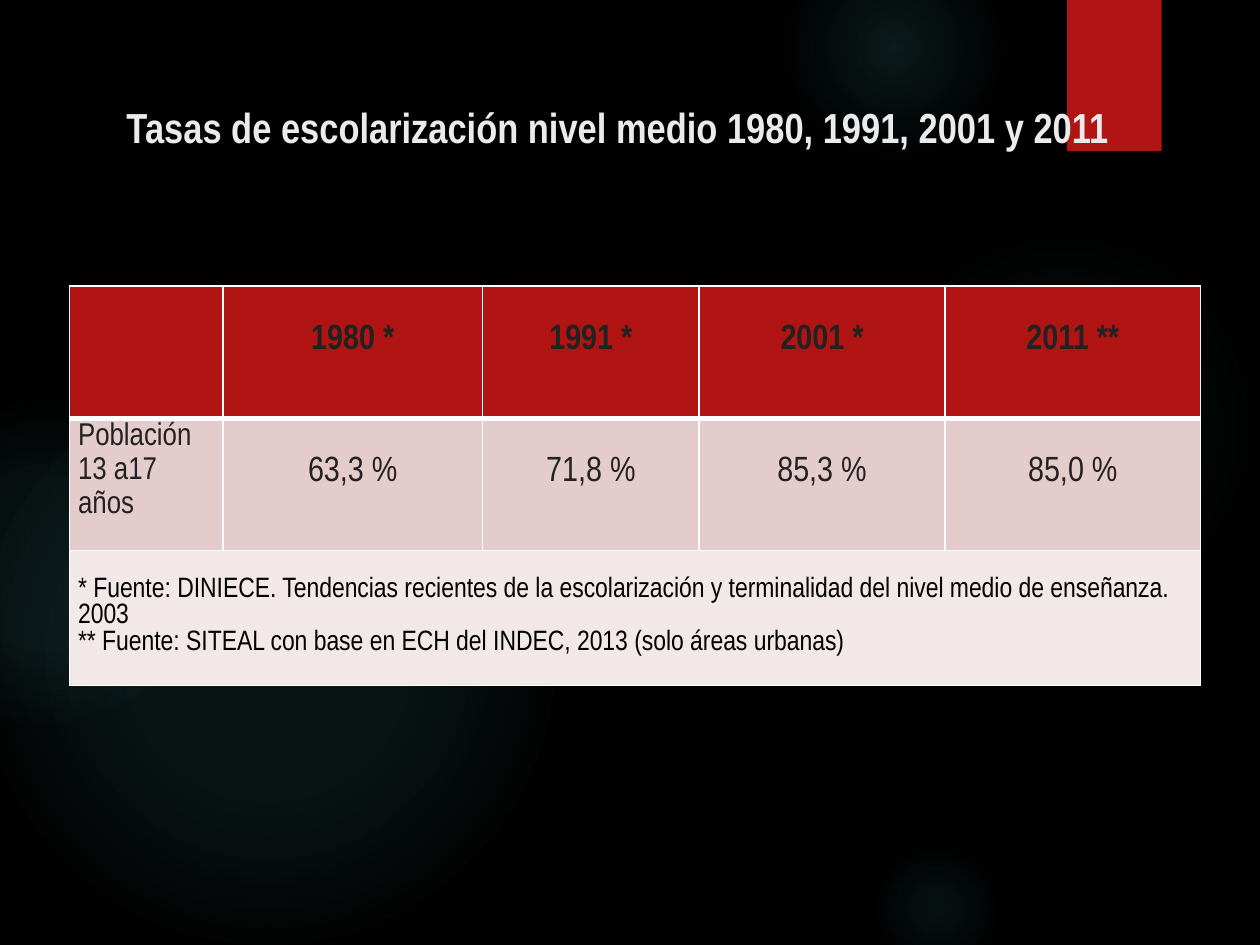
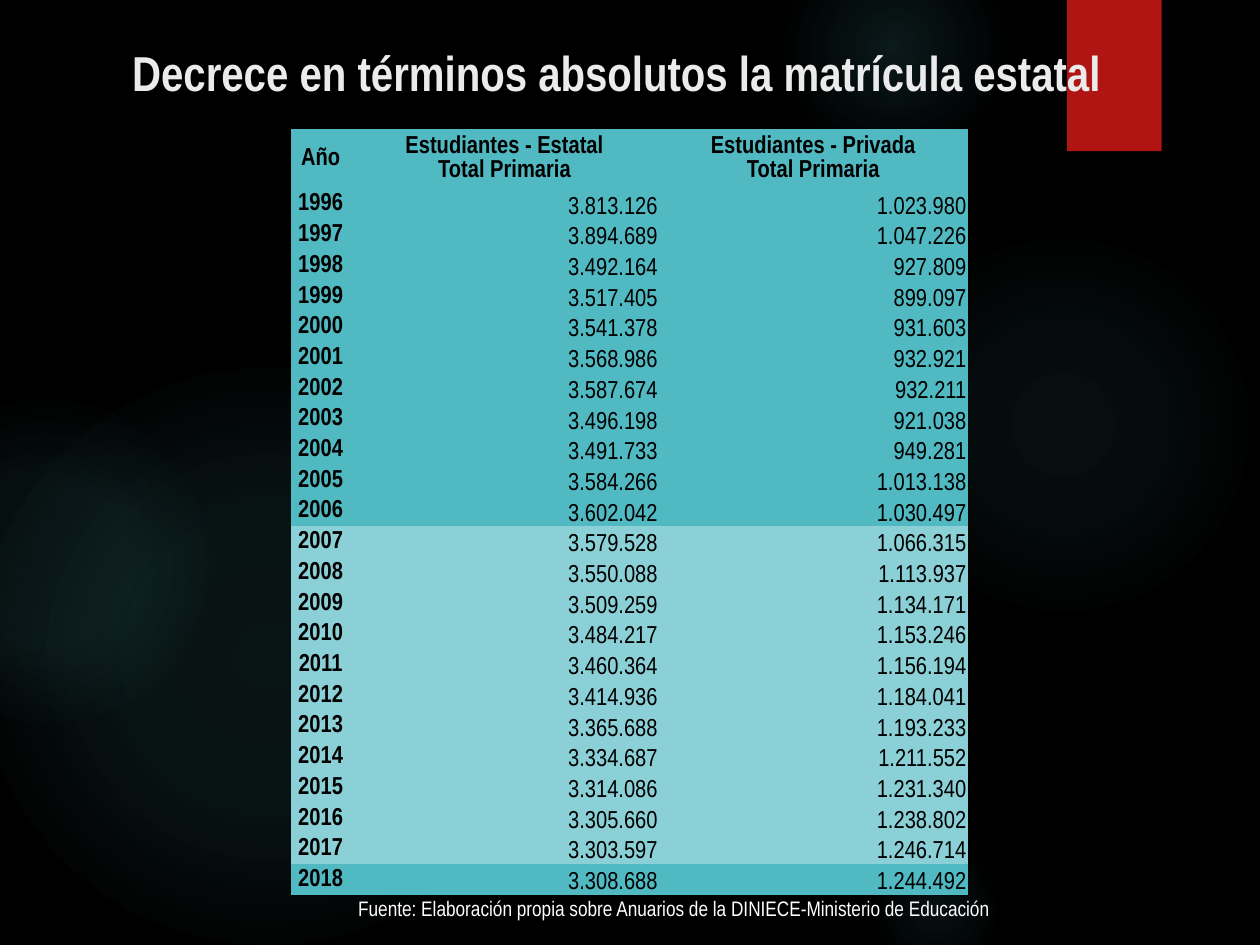
from dataclasses import dataclass
from typing import Any, Sequence

import pptx
import pptx.dml.color
import pptx.enum.shapes
import pptx.enum.text
import pptx.oxml
import pptx.oxml.ns
import pptx.util
from pptx.util import Inches

ALIGN = pptx.enum.text.PP_ALIGN
ANCHOR = pptx.enum.text.MSO_ANCHOR
SHAPE = pptx.enum.shapes.MSO_SHAPE


@dataclass(frozen=True)
class Theme:
    font: str = "Arial Narrow"
    black: str = "000000"
    white: str = "FFFFFF"
    title: str = "EBEBEB"
    ink: str = "222222"
    red: str = "B01513"
    pink: str = "E4CCCC"
    pale_pink: str = "F2E8E7"
    teal: str = "50B9C1"
    light_teal: str = "8AD0D6"
    rate_size: int = 20
    label_size: int = 18
    note_size: int = 16
    enrolment_size: int = 14
    source_size: int = 12


@dataclass(frozen=True)
class Glow:
    left: float
    top: float
    size: float
    stops: tuple[tuple[int, int], ...]  # position and opacity, in percent


@dataclass(frozen=True)
class Cell:
    text: str
    fill: str
    size: int
    color: str = "000000"
    bold: bool = False
    align: Any = ALIGN.CENTER
    anchor: Any = ANCHOR.TOP
    margins: tuple[float, float, float, float] = (0.01, 0.01, 0.01, 0)
    spacing: float = 1.0


THEME = Theme()

GLOWS = (
    Glow(6.89, 1.83, 3.08, ((0, 7), (36, 6), (69, 0))),
    Glow(6.22, -0.5, 1.75, ((0, 14), (36, 7), (73, 0))),
    Glow(6.89, 6.67, 1.08, ((0, 9), (36, 5), (66, 0))),
    Glow(-0.17, 2.92, 4.58, ((0, 11), (36, 10), (75, 0))),
    Glow(-0.92, 3.17, 2.58, ((0, 8), (36, 8), (72, 0))),
)

RATES = (("1980 *", "63,3 %"), ("1991 *", "71,8 %"),
         ("2001 *", "85,3 %"), ("2011 **", "85,0 %"))
RATE_SOURCES = (
    "* Fuente: DINIECE. Tendencias recientes de la escolarización y "
    "terminalidad del nivel medio de enseñanza. 2003\n"
    "** Fuente: SITEAL con base en ECH del INDEC, 2013 (solo áreas urbanas)"
)

FIRST_YEAR = 1996
LIGHT_YEARS = range(2007, 2018)
ENROLMENT = (
    ("3.813.126", "1.023.980"), ("3.894.689", "1.047.226"),
    ("3.492.164", "927.809"), ("3.517.405", "899.097"),
    ("3.541.378", "931.603"), ("3.568.986", "932.921"),
    ("3.587.674", "932.211"), ("3.496.198", "921.038"),
    ("3.491.733", "949.281"), ("3.584.266", "1.013.138"),
    ("3.602.042", "1.030.497"), ("3.579.528", "1.066.315"),
    ("3.550.088", "1.113.937"), ("3.509.259", "1.134.171"),
    ("3.484.217", "1.153.246"), ("3.460.364", "1.156.194"),
    ("3.414.936", "1.184.041"), ("3.365.688", "1.193.233"),
    ("3.334.687", "1.211.552"), ("3.314.086", "1.231.340"),
    ("3.305.660", "1.238.802"), ("3.303.597", "1.246.714"),
    ("3.308.688", "1.244.492"),
)


def rgb(color: str) -> pptx.dml.color.RGBColor:
    return pptx.dml.color.RGBColor.from_string(color)


def xml(body: str) -> Any:
    """Parse one DrawingML element whose tag starts the body."""
    tag, rest = body[1:].split(">", 1)
    return pptx.oxml.parse_xml(f"<{tag} {pptx.oxml.ns.nsdecls('a')}>{rest}")


def write(tf: Any, text: str, *, size: int, color: str, bold: bool = False,
          align: Any = ALIGN.CENTER, spacing: float = 1.0) -> None:
    """Fill a text frame, one paragraph for each line of text."""
    tf.word_wrap = True
    for i, line in enumerate(text.split("\n")):
        p = tf.add_paragraph() if i else tf.paragraphs[0]
        p.alignment = align
        p.line_spacing = spacing
        r = p.add_run()
        r.text = line
        r.font.name = THEME.font
        r.font.size = pptx.util.Pt(size)
        r.font.bold = bold
        r.font.color.rgb = rgb(color)


def add_text(s: Any, text: str, left: float, top: float, width: float,
             height: float, **style: Any) -> None:
    sp = s.shapes.add_textbox(*map(Inches, (left, top, width, height)))
    write(sp.text_frame, text, **style)


def add_glow(s: Any, glow: Glow) -> None:
    sp = s.shapes.add_shape(SHAPE.OVAL, *map(
        Inches, (glow.left, glow.top, glow.size, glow.size)))
    sp.shadow.inherit = False
    sp.line.fill.background()
    stops = "".join(
        f'<a:gs pos="{pos * 1000}"><a:srgbClr val="{THEME.teal}">'
        f'<a:alpha val="{alpha * 1000}"/></a:srgbClr></a:gs>'
        for pos, alpha in glow.stops)
    geometry = sp.element.spPr.find(pptx.oxml.ns.qn("a:prstGeom"))
    geometry.addnext(xml(
        f'<a:gradFill><a:gsLst>{stops}</a:gsLst><a:path path="circle">'
        '<a:fillToRect l="50000" t="50000" r="50000" b="50000"/>'
        '</a:path></a:gradFill>'))


def add_ribbon(s: Any) -> None:
    sp = s.shapes.add_shape(SHAPE.RECTANGLE, Inches(8.47), Inches(0),
                            Inches(0.75), Inches(1.2))
    sp.fill.solid()
    sp.fill.fore_color.rgb = rgb(THEME.red)
    sp.line.fill.background()
    sp.element.spPr.append(xml(
        '<a:effectLst><a:outerShdw blurRad="38100" dist="25400" dir="5400000">'
        f'<a:srgbClr val="{THEME.black}"><a:alpha val="45000"/></a:srgbClr>'
        '</a:outerShdw></a:effectLst>'))


def add_slide(prs: Any) -> Any:
    """Add a slide with the shared background, glows and ribbon."""
    s = prs.slides.add_slide(prs.slide_layouts[6])
    s.background.fill.solid()
    s.background.fill.fore_color.rgb = rgb(THEME.black)
    for glow in GLOWS:
        add_glow(s, glow)
    add_ribbon(s)
    return s


def set_borders(cell: Any, widths: dict[str, int]) -> None:
    """Set white borders in points by side; a width of 0 hides the side."""
    tc_pr = cell._tc.get_or_add_tcPr()
    for i, side in enumerate("LRTB"):
        width = widths[side]
        fill = (f'<a:solidFill><a:srgbClr val="{THEME.white}"/></a:solidFill>'
                if width else "<a:noFill/>")
        line = xml(f"<a:ln{side}>{fill}</a:ln{side}>")
        line.set("w", str(pptx.util.Pt(width)))
        tc_pr.insert(i, line)


def add_table(s: Any, left: float, top: float, cols: Sequence[float],
              heights: Sequence[float], rows: Sequence[Sequence[Cell]],
              border: int = 0, header_border: int = 0) -> Any:
    """Draw the cells; a row with a single cell spans the whole table."""
    tbl = s.shapes.add_table(
        len(rows), len(cols), Inches(left), Inches(top),
        Inches(sum(cols)), Inches(sum(heights))).table
    for column, width in zip(tbl.columns, cols):
        column.width = Inches(width)
    for i, (row, height) in enumerate(zip(rows, heights)):
        tbl.rows[i].height = Inches(height)
        if len(row) == 1:
            tbl.cell(i, 0).merge(tbl.cell(i, len(cols) - 1))
        widths = {side: border for side in "LRTB"}
        if i < 2:
            widths["T" if i else "B"] = header_border
        for j in range(len(cols)):
            set_borders(tbl.cell(i, j), widths)
        for j, item in enumerate(row):
            cell = tbl.cell(i, j)
            cell.fill.solid()
            cell.fill.fore_color.rgb = rgb(item.fill)
            cell.vertical_anchor = item.anchor
            (cell.margin_left, cell.margin_top, cell.margin_right,
             cell.margin_bottom) = map(Inches, item.margins)
            if item.text:
                write(cell.text_frame, item.text, size=item.size,
                      color=item.color, bold=item.bold, align=item.align,
                      spacing=item.spacing)
    return tbl


def rate_cell(text: str, fill: str, bold: bool = False) -> Cell:
    return Cell(text, fill, THEME.rate_size, THEME.ink, bold,
                margins=(0.07, 0.26, 0.07, 0), spacing=1.15)


def add_rates_slide(prs: Any) -> None:
    s = add_slide(prs)
    add_text(s, "Tasas de escolarización nivel medio 1980, 1991, 2001 y 2011",
             0.55, 0.76, 8.7, 0.95, size=24, color=THEME.title, bold=True)
    population = Cell("Población\n13 a17 años", THEME.pink, THEME.label_size,
                      THEME.ink, align=ALIGN.LEFT,
                      margins=(0.07, 0, 0.07, 0), spacing=1.15)
    sources = Cell(RATE_SOURCES, THEME.pale_pink, THEME.note_size,
                   align=ALIGN.LEFT, margins=(0.07, 0.21, 0.07, 0))
    rows = [
        [rate_cell("", THEME.red)]
        + [rate_cell(year, THEME.red, bold=True) for year, _ in RATES],
        [population] + [rate_cell(rate, THEME.pink) for _, rate in RATES],
        [sources],
    ]
    add_table(s, 0.55, 2.27, (1.22, 2.06, 1.72, 1.95, 2.03),
              (1.05, 1.05, 1.07), rows, border=1, header_border=3)


def add_enrolment_slide(prs: Any) -> None:
    s = add_slide(prs)
    add_text(s, "Decrece en términos absolutos la matrícula estatal",
             0.53, 0.29, 8.72, 0.55, size=28, color=THEME.title, bold=True)

    def heading(text: str, fill: str) -> Cell:
        return Cell(text, fill, THEME.enrolment_size, bold=True,
                    anchor=ANCHOR.MIDDLE)

    rows = [[heading(text, THEME.teal) for text in (
        "Año", "Estudiantes - Estatal\nTotal Primaria",
        "Estudiantes - Privada\nTotal Primaria")]]
    for year, counts in enumerate(ENROLMENT, FIRST_YEAR):
        fill = THEME.light_teal if year in LIGHT_YEARS else THEME.teal
        rows.append([heading(str(year), fill)] + [
            Cell(count, fill, THEME.enrolment_size, align=ALIGN.RIGHT,
                 anchor=ANCHOR.BOTTOM) for count in counts])
    add_table(s, 2.31, 1.02, (0.47, 2.45, 2.45),
              [0.47] + [0.24] * len(ENROLMENT), rows)
    add_text(s, "Fuente: Elaboración propia sobre Anuarios de la "
             "DINIECE-Ministerio de Educación", 0.98, 7.06, 8.74, 0.3,
             size=THEME.source_size, color=THEME.white)


def main() -> None:
    prs = pptx.Presentation()
    prs.slide_width, prs.slide_height = Inches(10), Inches(7.5)
    add_rates_slide(prs)
    add_enrolment_slide(prs)
    prs.save("out.pptx")


if __name__ == "__main__":
    main()
